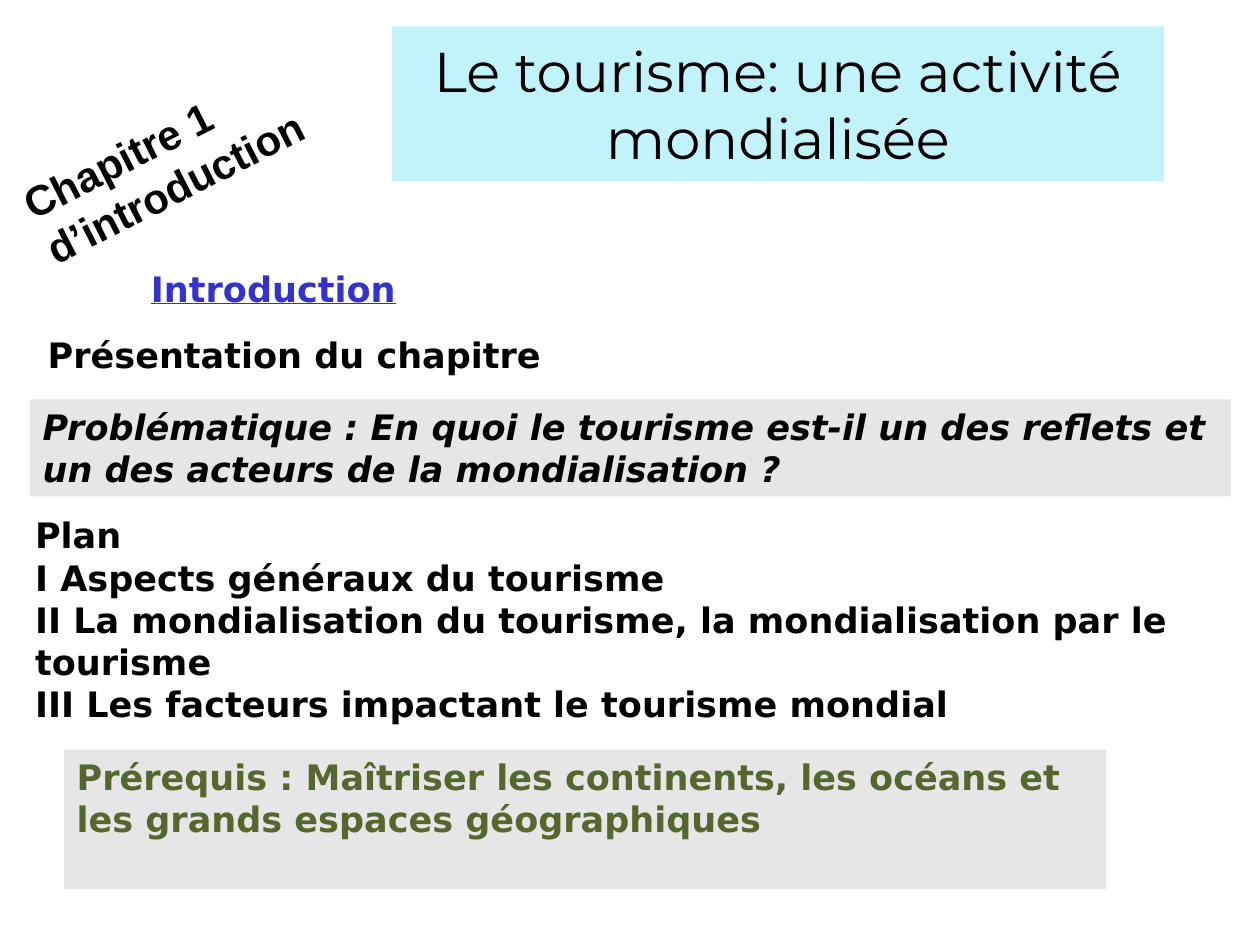
import pptx
import pptx.dml.color
import pptx.enum.shapes
import pptx.enum.text
import pptx.util

Inches = pptx.util.Inches
ALIGN = pptx.enum.text.PP_ALIGN
ANCHOR = pptx.enum.text.MSO_ANCHOR
BODY = {"name": "DejaVu Sans", "size": pptx.util.Pt(20), "bold": True}


def set_color(target, value):
    """Give a fill or font colour object a hex colour."""
    target.rgb = pptx.dml.color.RGBColor.from_string(value)


def add_text(s, box, lines, style, color="000000", fill=None,
             align=ALIGN.LEFT, anchor=ANCHOR.TOP, rotation=0):
    """Place paragraphs of one style in a box, filled if a fill is given."""
    place = [Inches(v) for v in box]
    if fill:
        sp = s.shapes.add_shape(pptx.enum.shapes.MSO_SHAPE.RECTANGLE, *place)
        sp.shadow.inherit = False
        sp.fill.solid()
        set_color(sp.fill.fore_color, fill)
        sp.line.fill.background()
    else:
        sp = s.shapes.add_textbox(*place)
    sp.rotation = rotation
    tf = sp.text_frame
    tf.word_wrap = True
    tf.vertical_anchor = anchor
    for i, line in enumerate(lines):
        p = tf.add_paragraph() if i else tf.paragraphs[0]
        p.alignment = align
        r = p.add_run()
        r.text = line
        for name, value in style.items():
            setattr(r.font, name, value)
        set_color(r.font.color, color)
    return sp


def add_title(s, box):
    """Place the lesson title on its pale blue band."""
    style = {"name": "Montserrat", "size": pptx.util.Pt(32), "bold": False}
    add_text(s, box, ["Le tourisme: une activité mondialisée"], style,
             fill="C2F2FA", align=ALIGN.CENTER, anchor=ANCHOR.MIDDLE)


def add_chapter_tag(s, box):
    """Place the slanted chapter label."""
    style = {"name": "Arial", "size": pptx.util.Pt(24), "bold": True}
    add_text(s, box, ["Chapitre 1 d’introduction"], style,
             fill="FFFFFF", rotation=333)


def add_introduction(s, box):
    """Place the underlined section heading."""
    add_text(s, box, ["Introduction"], {**BODY, "underline": True}, "3333CC")


def add_presentation(s, box):
    """Place the chapter presentation line."""
    add_text(s, box, ["Présentation du chapitre"], BODY)


def add_question(s, box):
    """Place the guiding question on its grey band."""
    add_text(s, box, ["Problématique : En quoi le tourisme est-il un des reflets "
                      "et un des acteurs de la mondialisation ?"],
             {**BODY, "italic": True}, fill="E6E6E6")


def add_plan(s, box):
    """Place the plan and its three parts."""
    add_text(s, box, [
        "Plan",
        "I Aspects généraux du tourisme",
        "II La mondialisation du tourisme, la mondialisation par le tourisme",
        "III Les facteurs impactant le tourisme mondial",
    ], BODY)


def add_prerequisites(s, box):
    """Place the prerequisites in green on grey."""
    add_text(s, box, ["Prérequis : Maîtriser les continents, les océans et "
                      "les grands espaces géographiques"],
             BODY, "53672F", fill="E6E6E6")


def main():
    """Build the slide and save it."""
    prs = pptx.Presentation()
    prs.slide_width, prs.slide_height = Inches(10), Inches(7.5)
    s = prs.slides.add_slide(prs.slide_layouts[6])
    add_title(s, (3.11, 0.21, 6.13, 1.23))
    add_chapter_tag(s, (0.06, 0.78, 2.76, 0.91))
    add_introduction(s, (1.1, 2.07, 2.44, 0.44))
    add_presentation(s, (0.28, 2.6, 4.25, 0.44))
    add_question(s, (0.24, 3.17, 9.53, 0.77))
    add_plan(s, (0.18, 4.03, 9.79, 1.78))
    add_prerequisites(s, (0.51, 5.95, 8.27, 1.11))
    prs.save("out.pptx")


if __name__ == "__main__":
    main()
